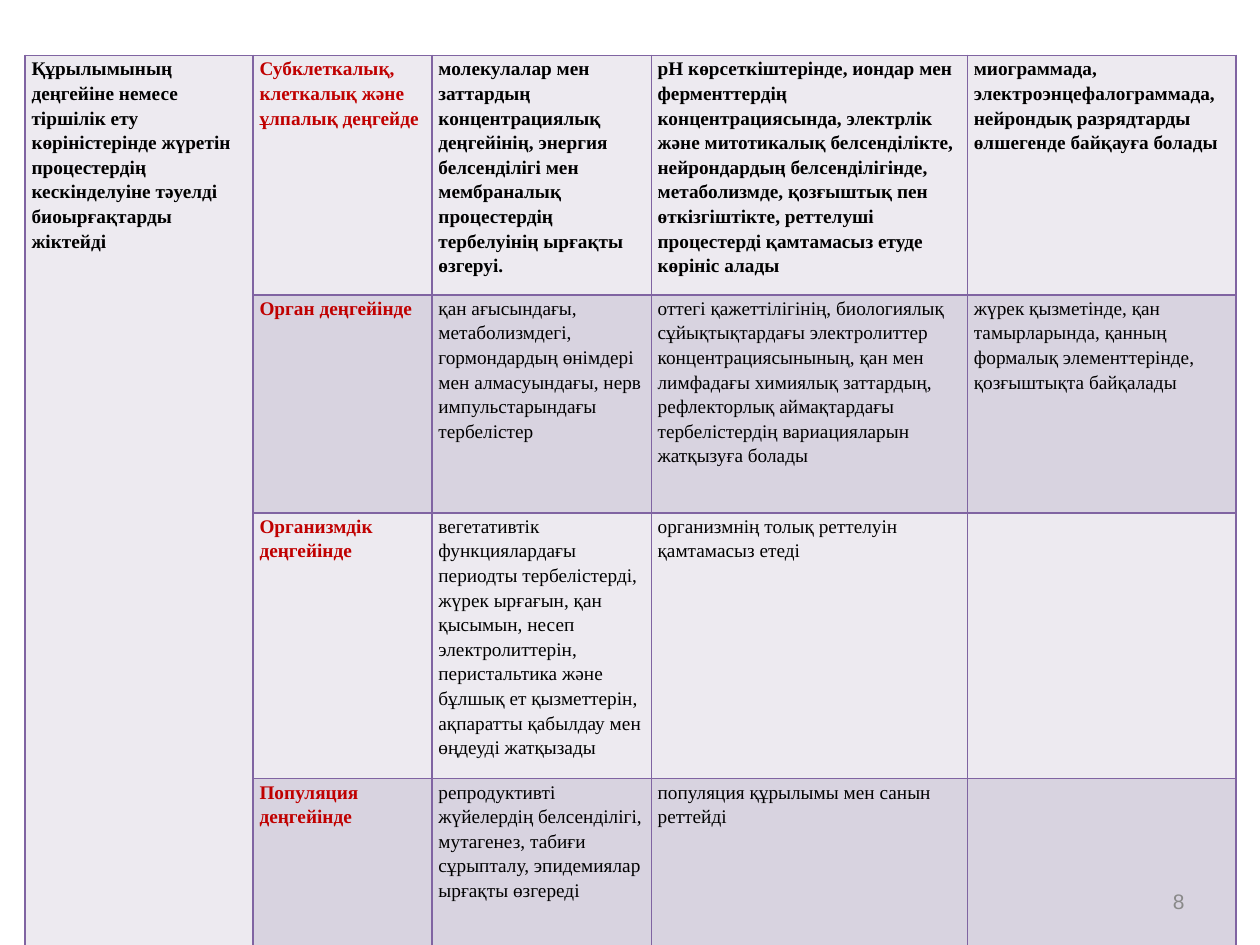
from dataclasses import dataclass
from lxml.etree import SubElement
from pptx import Presentation
from pptx.dml.color import RGBColor as RGB
from pptx.enum.text import MSO_ANCHOR as Anchor, PP_ALIGN as Align
from pptx.oxml.ns import qn
from pptx.util import Inches, Pt


@dataclass(frozen=True)
class Theme:
    font: str = "Times New Roman"
    number_font: str = "Arial"
    text: str = "000000"
    level: str = "C00000"
    number: str = "898989"
    border: str = "8064A2"
    bands: tuple = ("EDEAF0", "D8D3E0")
    body_size: int = 11
    number_size: int = 12
    border_width: int = 1
    line_spacing: float = 1.15


THEME = Theme()
WIDTH, HEIGHT = 10, 7.5
LEFT, TOP = 0.2, 0.44
COLS = (1.81, 1.42, 1.74, 2.51, 2.13)
ROWS = (1.9, 1.73, 2.11, 1.35)
LEVEL_COL = 1

CELLS = (
    (
        "Құрылымының деңгейіне немесе тіршілік ету көріністерінде жүретін процестердің кескінделуіне тәуелді биоырғақтарды жіктейді",
        "Субклеткалық, клеткалық және ұлпалық деңгейде",
        "молекулалар мен заттардың концентрациялық деңгейінің, энергия белсенділігі мен мембраналық процестердің тербелуінің ырғақты өзгеруі.",
        "рН көрсеткіштерінде, иондар мен ферменттердің концентрациясында, электрлік және митотикалық белсенділікте, нейрондардың белсенділігінде, метаболизмде, қозғыштық пен өткізгіштікте, реттелуші процестерді қамтамасыз етуде көрініс алады",
        "миограммада, электроэнцефалограммада, нейрондық разрядтарды өлшегенде байқауға болады",
    ),
    (
        "",
        "Орган деңгейінде",
        "қан ағысындағы, метаболизмдегі, гормондардың өнімдері мен алмасуындағы, нерв импульстарындағы тербелістер",
        "оттегі қажеттілігінің, биологиялық сұйықтықтардағы электролиттер концентрациясынының, қан мен лимфадағы химиялық заттардың, рефлекторлық аймақтардағы тербелістердің вариацияларын жатқызуға болады",
        "жүрек қызметінде, қан тамырларында, қанның формалық элементтерінде, қозғыштықта байқалады",
    ),
    (
        "",
        "Организмдік деңгейінде",
        "вегетативтік функциялардағы периодты тербелістерді, жүрек ырғағын, қан қысымын, несеп электролиттерін, перистальтика және бұлшық ет қызметтерін, ақпаратты қабылдау мен өңдеуді жатқызады",
        "организмнің толық реттелуін қамтамасыз етеді",
        "",
    ),
    (
        "",
        "Популяция деңгейінде",
        "репродуктивті жүйелердің белсенділігі, мутагенез, табиғи сұрыпталу, эпидемиялар ырғақты өзгереді",
        "популяция құрылымы мен санын реттейді",
        "",
    ),
)


def style_font(font, name, size, color, bold=False):
    font.name = name
    font.size = Pt(size)
    font.bold = bold
    font.color.rgb = RGB.from_string(color)


def set_borders(cell):
    tcPr = cell._tc.get_or_add_tcPr()
    for i, side in enumerate(("lnL", "lnR", "lnT", "lnB")):
        ln = tcPr.makeelement(qn(f"a:{side}"), {"w": str(Pt(THEME.border_width))})
        fill = SubElement(ln, qn("a:solidFill"))
        SubElement(fill, qn("a:srgbClr"), val=THEME.border)
        tcPr.insert(i, ln)


def fill_cell(cell, text, row, col):
    cell.margin_left = cell.margin_right = Inches(0.05)
    cell.margin_top = cell.margin_bottom = 0
    cell.fill.solid()
    cell.fill.fore_color.rgb = RGB.from_string(THEME.bands[row % 2])
    set_borders(cell)
    if text:
        is_level = col == LEVEL_COL
        cell.text_frame.text = text
        p = cell.text_frame.paragraphs[0]
        p.line_spacing = THEME.line_spacing
        color = THEME.level if is_level else THEME.text
        style_font(p.runs[0].font, THEME.font, THEME.body_size, color, is_level or row == 0)


def add_levels_table(s):
    frame = s.shapes.add_table(
        len(ROWS), len(COLS), Inches(LEFT), Inches(TOP), Inches(sum(COLS)), Inches(sum(ROWS))
    )
    table = frame.table
    table.first_row = table.horz_banding = False
    for column, width in zip(table.columns, COLS):
        column.width = Inches(width)
    for row, height in zip(table.rows, ROWS):
        row.height = Inches(height)
    for r, texts in enumerate(CELLS):
        for c, text in enumerate(texts):
            fill_cell(table.cell(r, c), text, r, c)
    table.cell(0, 0).merge(table.cell(len(ROWS) - 1, 0))


def add_page_number(s, number):
    sp = s.shapes.add_textbox(Inches(7.17), Inches(6.95), Inches(2.33), Inches(0.4))
    tf = sp.text_frame
    tf.word_wrap = True
    tf.vertical_anchor = Anchor.MIDDLE
    tf.text = number
    p = tf.paragraphs[0]
    p.alignment = Align.RIGHT
    style_font(p.runs[0].font, THEME.number_font, THEME.number_size, THEME.number)


def main():
    prs = Presentation()
    prs.slide_width, prs.slide_height = Inches(WIDTH), Inches(HEIGHT)
    s = prs.slides.add_slide(prs.slide_layouts[6])
    add_levels_table(s)
    add_page_number(s, "8")
    prs.save("out.pptx")


if __name__ == "__main__":
    main()
